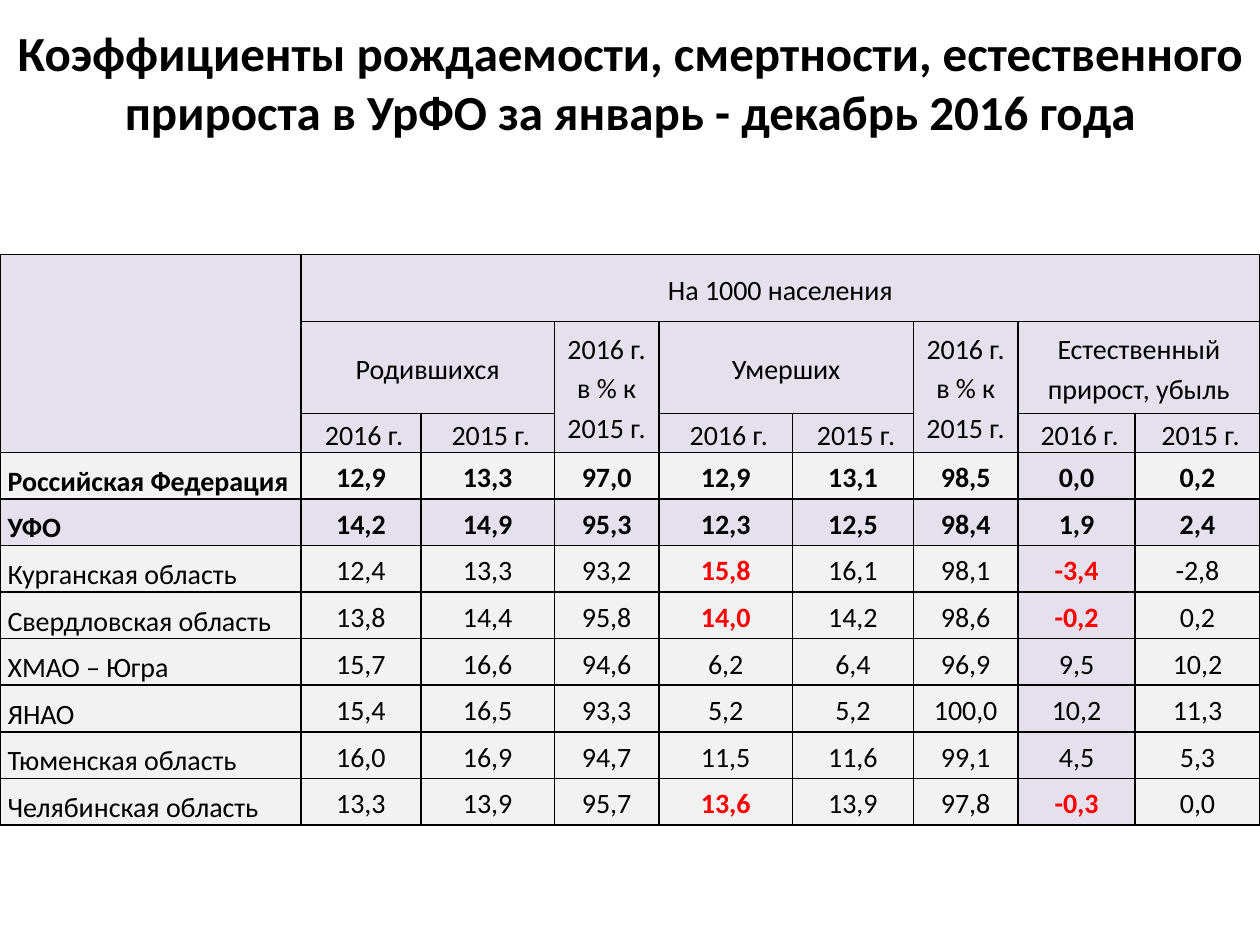
from dataclasses import dataclass
from typing import NamedTuple

from lxml import etree
from pptx import Presentation
from pptx.dml.color import RGBColor
from pptx.enum.text import MSO_ANCHOR, PP_ALIGN
from pptx.oxml.ns import qn
from pptx.util import Inches, Pt

LEFT, CENTER = PP_ALIGN.LEFT, PP_ALIGN.CENTER
TOP, MIDDLE, BOTTOM = MSO_ANCHOR.TOP, MSO_ANCHOR.MIDDLE, MSO_ANCHOR.BOTTOM


@dataclass(frozen=True)
class Theme:
    font: str = "Calibri"
    title_size: int = 28
    table_size: int = 16
    line_spacing: float = 1.15
    border_width: float = 1
    black: str = "000000"
    red: str = "FF0000"
    lilac: str = "E6E0EC"
    gray: str = "F2F2F2"


class Header(NamedTuple):
    row: int
    column: int
    text: str
    row_span: int = 1
    column_span: int = 1
    left_inset: float = 0.06


class Region(NamedTuple):
    name: str
    values: str
    bold: bool = False
    fill: str = Theme.gray


THEME = Theme()
TITLE = ("Коэффициенты рождаемости, смертности, естественного прироста "
         "в УрФО за январь - декабрь 2016 года")
COLUMN_WIDTHS = (2.39, 0.95, 1.06, 0.83, 1.06, 0.96, 0.83, 0.93, 0.99)
HEADER_HEIGHTS = (0.53, 0.73, 0.31)
REGION_HEIGHT = 0.37
DEATHS_COLUMN, GROWTH_COLUMN = 4, 7
RATIO = "2016 г. в % к 2015 г."
HEADERS = [
    Header(0, 0, "", row_span=3),
    Header(0, 1, "На 1000 населения", column_span=8),
    Header(1, 1, "Родившихся", column_span=2),
    Header(1, 3, RATIO, row_span=2),
    Header(1, 4, "Умерших", column_span=2),
    Header(1, 6, RATIO, row_span=2),
    Header(1, 7, "Естественный прирост, убыль", column_span=2),
] + [
    Header(2, first + offset, year, left_inset=0.11)
    for first in (1, 4, 7)
    for offset, year in enumerate(("2016 г.", "2015 г."))
]
REGIONS = [
    Region("Российская Федерация", "12,9 13,3 97,0 12,9 13,1 98,5 0,0 0,2", bold=True),
    Region("УФО", "14,2 14,9 95,3 12,3 12,5 98,4 1,9 2,4", bold=True, fill=THEME.lilac),
    Region("Курганская область", "12,4 13,3 93,2 15,8 16,1 98,1 -3,4 -2,8"),
    Region("Свердловская область", "13,8 14,4 95,8 14,0 14,2 98,6 -0,2 0,2"),
    Region("ХМАО – Югра", "15,7 16,6 94,6 6,2 6,4 96,9 9,5 10,2"),
    Region("ЯНАО", "15,4 16,5 93,3 5,2 5,2 100,0 10,2 11,3"),
    Region("Тюменская область", "16,0 16,9 94,7 11,5 11,6 99,1 4,5 5,3"),
    Region("Челябинская область", "13,3 13,9 95,7 13,6 13,9 97,8 -0,3 0,0"),
]


def write_text(text_frame, text: str, *, size: float, color: str = THEME.black,
               bold: bool = False, align=CENTER, line_spacing: float = 1.0) -> None:
    paragraph = text_frame.paragraphs[0]
    paragraph.alignment = align
    paragraph.line_spacing = line_spacing
    run = paragraph.add_run()
    run.text = text
    run.font.name = THEME.font
    run.font.size = Pt(size)
    run.font.bold = bold
    run.font.color.rgb = RGBColor.from_string(color)


def style_cell(cell, fill: str) -> None:
    cell.margin_left = cell.margin_right = Inches(0.06)
    cell.margin_top = cell.margin_bottom = 0
    cell.vertical_anchor = MIDDLE
    cell.fill.solid()
    cell.fill.fore_color.rgb = RGBColor.from_string(fill)
    properties = cell._tc.get_or_add_tcPr()
    for index, side in enumerate(("lnL", "lnR", "lnT", "lnB")):
        border = etree.Element(qn(f"a:{side}"), w=str(Pt(THEME.border_width)))
        solid = etree.SubElement(border, qn("a:solidFill"))
        etree.SubElement(solid, qn("a:srgbClr"), val=THEME.black)
        properties.insert(index, border)


def write_cell(cell, text: str, **text_format) -> None:
    write_text(cell.text_frame, text, size=THEME.table_size,
               line_spacing=THEME.line_spacing, **text_format)


def add_header(table, header: Header) -> None:
    cell = table.cell(header.row, header.column)
    if header.row_span > 1 or header.column_span > 1:
        cell.merge(table.cell(header.row + header.row_span - 1,
                              header.column + header.column_span - 1))
    cell.margin_left = Inches(header.left_inset)
    if header.text:
        write_cell(cell, header.text)


def add_region(table, row: int, region: Region) -> None:
    values = region.values.split()
    declining = values[GROWTH_COLUMN - 1].startswith("-")
    for column, text in enumerate([region.name, *values]):
        cell = table.cell(row, column)
        style_cell(cell, THEME.lilac if column == GROWTH_COLUMN else region.fill)
        alarming = declining and column in (DEATHS_COLUMN, GROWTH_COLUMN)
        write_cell(cell, text, bold=region.bold or alarming,
                   color=THEME.red if alarming else THEME.black,
                   align=CENTER if column else LEFT)
    table.cell(row, 0).vertical_anchor = BOTTOM


def add_title(slide) -> None:
    title = slide.shapes.add_textbox(0, Inches(0.13), Inches(10), Inches(1.15))
    title.text_frame.word_wrap = True
    title.text_frame.vertical_anchor = TOP
    write_text(title.text_frame, TITLE, size=THEME.title_size, bold=True)


def add_rates_table(slide) -> None:
    heights = [*HEADER_HEIGHTS, *[REGION_HEIGHT] * len(REGIONS)]
    table = slide.shapes.add_table(
        len(heights), len(COLUMN_WIDTHS), 0, Inches(2.02),
        Inches(sum(COLUMN_WIDTHS)), Inches(sum(heights))).table
    table.first_row = table.horz_banding = False
    for column, width in zip(table.columns, COLUMN_WIDTHS):
        column.width = Inches(width)
    for row, height in zip(table.rows, heights):
        row.height = Inches(height)
    for row in range(len(HEADER_HEIGHTS)):
        for column in range(len(COLUMN_WIDTHS)):
            style_cell(table.cell(row, column), THEME.lilac)
    for header in HEADERS:
        add_header(table, header)
    for row, region in enumerate(REGIONS, start=len(HEADER_HEIGHTS)):
        add_region(table, row, region)


def main() -> None:
    """Build the slide with birth, death and natural growth rates."""
    presentation = Presentation()
    presentation.slide_width = Inches(10)
    presentation.slide_height = Inches(7.5)
    slide = presentation.slides.add_slide(presentation.slide_layouts[6])
    add_title(slide)
    add_rates_table(slide)
    presentation.save("out.pptx")


if __name__ == "__main__":
    main()
